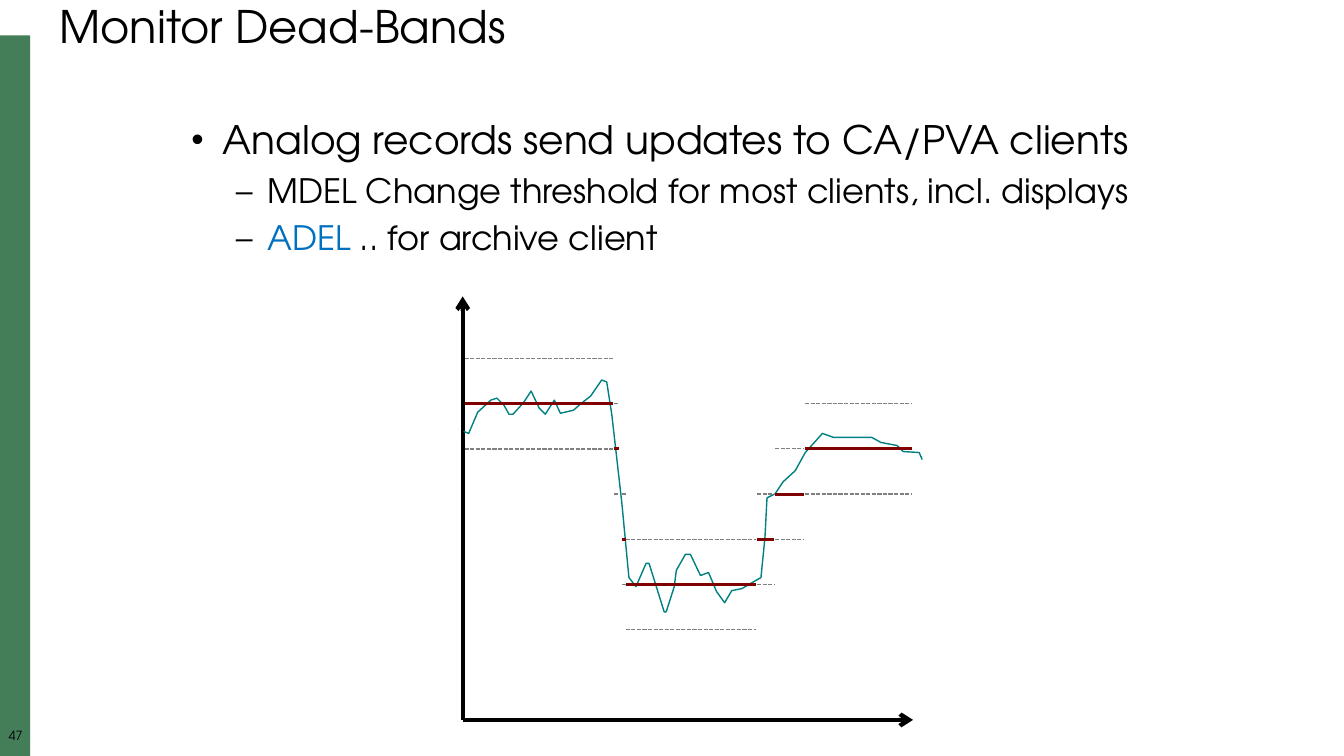
import pptx
import pptx.dml.color
import pptx.enum.dml
import pptx.enum.shapes
import pptx.enum.text
import pptx.oxml
import pptx.oxml.ns
import pptx.util
from pptx.util import Cm

FONT = "TeX Gyre Adventor"
BLACK, GREEN, BLUE = "000000", "447E59", "0070C0"
TEAL, GRAY, DARK_RED = "008080", "808080", "800000"

# Values sent to clients: start x and end x in cm, dead-bands below the top level
TOP_LEVEL, DEAD_BAND = 10.17, 1.14
SENT_VALUES = [
    (11.71, 15.44, 0),
    (15.47, 15.6, 1),
    (15.67, 15.77, 3),
    (15.77, 19.05, 4),
    (19.08, 19.51, 3),
    (19.53, 20.27, 2),
    (20.29, 22.99, 1),
]

# Turning points of the analog signal, in hundredths of an inch
SIGNAL_UNIT = Cm(2.54) / 100
SIGNAL = [
    (460, 428), (465, 430), (474, 409), (487, 397), (493, 395), (500, 402),
    (505, 411), (509, 411), (519, 400), (527, 388), (535, 405), (541, 411),
    (550, 397), (556, 410), (569, 407), (577, 400), (586, 393), (597, 377),
    (602, 379), (607, 411), (617, 499), (624, 573), (631, 582), (641, 559),
    (644, 559), (659, 607), (661, 607), (669, 582), (671, 566), (680, 550),
    (685, 550), (695, 571), (703, 568), (711, 587), (719, 598), (726, 586),
    (736, 584), (755, 573), (759, 533), (761, 494), (769, 490), (777, 478),
    (789, 467), (799, 449), (816, 430), (827, 434), (865, 434), (874, 439),
    (890, 442), (896, 448), (912, 449), (915, 456),
]


def color(value):
    return pptx.dml.color.RGBColor.from_string(value)


def add_element(parent, tag, content=""):
    namespace = pptx.oxml.ns.nsdecls("a")
    parent.append(pptx.oxml.parse_xml(f"<a:{tag} {namespace}{content}"))


def format_paragraph(paragraph, size, alignment=pptx.enum.text.PP_ALIGN.LEFT, space_before=0):
    paragraph.alignment = alignment
    paragraph.line_spacing = 0.9
    paragraph.space_before = pptx.util.Pt(space_before)
    paragraph.space_after = pptx.util.Pt(0)
    paragraph.font.name = FONT
    paragraph.font.size = pptx.util.Pt(size)
    paragraph.font.color.rgb = color(BLACK)


def add_bullet(paragraph, character, indent):
    properties = paragraph._p.get_or_add_pPr()
    properties.set("marL", str(Cm(indent)))
    properties.set("indent", str(Cm(-0.79)))
    add_element(properties, "buClr", f'><a:srgbClr val="{BLACK}"/></a:buClr>')
    add_element(properties, "buSzPct", ' val="90000"/>')
    add_element(properties, "buChar", f' char="{character}"/>')


def place(shape, left, top, width, height):
    shape.left, shape.top = Cm(left), Cm(top)
    shape.width, shape.height = Cm(width), Cm(height)
    frame = shape.text_frame
    frame.auto_size = pptx.enum.text.MSO_AUTO_SIZE.NONE
    frame.vertical_anchor = pptx.enum.text.MSO_ANCHOR.TOP
    frame.word_wrap = True
    return frame


def add_title(slide, text):
    frame = place(slide.shapes.title, 1.24, 0, 31.75, 1.5)
    frame.text = text
    format_paragraph(frame.paragraphs[0], 32)


def add_list(slide, items):
    frame = place(slide.placeholders[1], 4.57, 2.92, 24.71, 4.57)
    for index, (level, runs) in enumerate(items):
        paragraph = frame.add_paragraph() if index else frame.paragraphs[0]
        paragraph.level = level
        add_bullet(paragraph, "•–"[level], (0.79, 1.91)[level])
        format_paragraph(paragraph, (28, 24)[level], space_before=8 if index else 0)
        for text, run_color in runs:
            run = paragraph.add_run()
            run.text = text
            if run_color:
                run.font.color.rgb = color(run_color)


def add_side_bar(slide, number):
    bar = slide.shapes.add_shape(
        pptx.enum.shapes.MSO_SHAPE.RECTANGLE, Cm(0), Cm(0.89), Cm(0.76), Cm(18.16))
    bar.shadow.inherit = False
    bar.fill.solid()
    bar.fill.fore_color.rgb = color(GREEN)
    bar.line.fill.background()
    box = slide.shapes.add_textbox(0, 0, 0, 0)
    frame = place(box, 0, 18.39, 0.79, 0.43)
    frame.margin_left = frame.margin_right = frame.margin_top = frame.margin_bottom = 0
    frame.text = number
    format_paragraph(frame.paragraphs[0], 9, pptx.enum.text.PP_ALIGN.CENTER)


def add_line(slide, start, end, line_color, width, dashed=False, arrow=False):
    connector = slide.shapes.add_connector(
        pptx.enum.shapes.MSO_CONNECTOR.STRAIGHT, *map(Cm, start + end))
    connector.line.color.rgb = color(line_color)
    connector.line.width = pptx.util.Pt(width)
    if dashed:
        connector.line.dash_style = pptx.enum.dml.MSO_LINE.SQUARE_DOT
    if arrow:
        add_element(connector.line._get_or_add_ln(), "tailEnd", ' type="arrow"/>')
    add_element(connector._element.spPr, "effectLst", "/>")


def add_signal(slide):
    builder = slide.shapes.build_freeform(*SIGNAL[0], scale=SIGNAL_UNIT)
    builder.add_line_segments(SIGNAL[1:], close=False)
    curve = builder.convert_to_shape()
    curve.shadow.inherit = False
    curve.fill.background()
    curve.line.color.rgb = color(TEAL)
    curve.line.width = pptx.util.Pt(1)


def add_sent_value(slide, start, end, step):
    level = TOP_LEVEL + step * DEAD_BAND
    for limit in (level - DEAD_BAND, level + DEAD_BAND):
        add_line(slide, (start, limit), (end, limit), GRAY, 1, dashed=True)
    add_line(slide, (start, level), (end, level), DARK_RED, 2.15)


def main():
    presentation = pptx.Presentation()
    presentation.slide_width, presentation.slide_height = Cm(33.87), Cm(19.05)
    slide = presentation.slides.add_slide(presentation.slide_layouts[1])

    # Frame and text
    add_side_bar(slide, "47")
    add_title(slide, "Monitor Dead-Bands")
    add_list(slide, [
        (0, [("Analog records send updates to CA/PVA clients", None)]),
        (1, [("MDEL Change threshold for most clients, incl. displays", None)]),
        (1, [("ADEL", BLUE), (" .. for archive client", None)]),
    ])

    # Axes from a shared corner
    corner = (11.66, 18.14)
    for tip in ((11.66, 7.47), (23.01, 18.14)):
        add_line(slide, corner, tip, BLACK, 3, arrow=True)

    # Signal and the values sent with their dead-bands
    add_signal(slide)
    for sent_value in SENT_VALUES:
        add_sent_value(slide, *sent_value)

    presentation.save("out.pptx")


if __name__ == "__main__":
    main()
